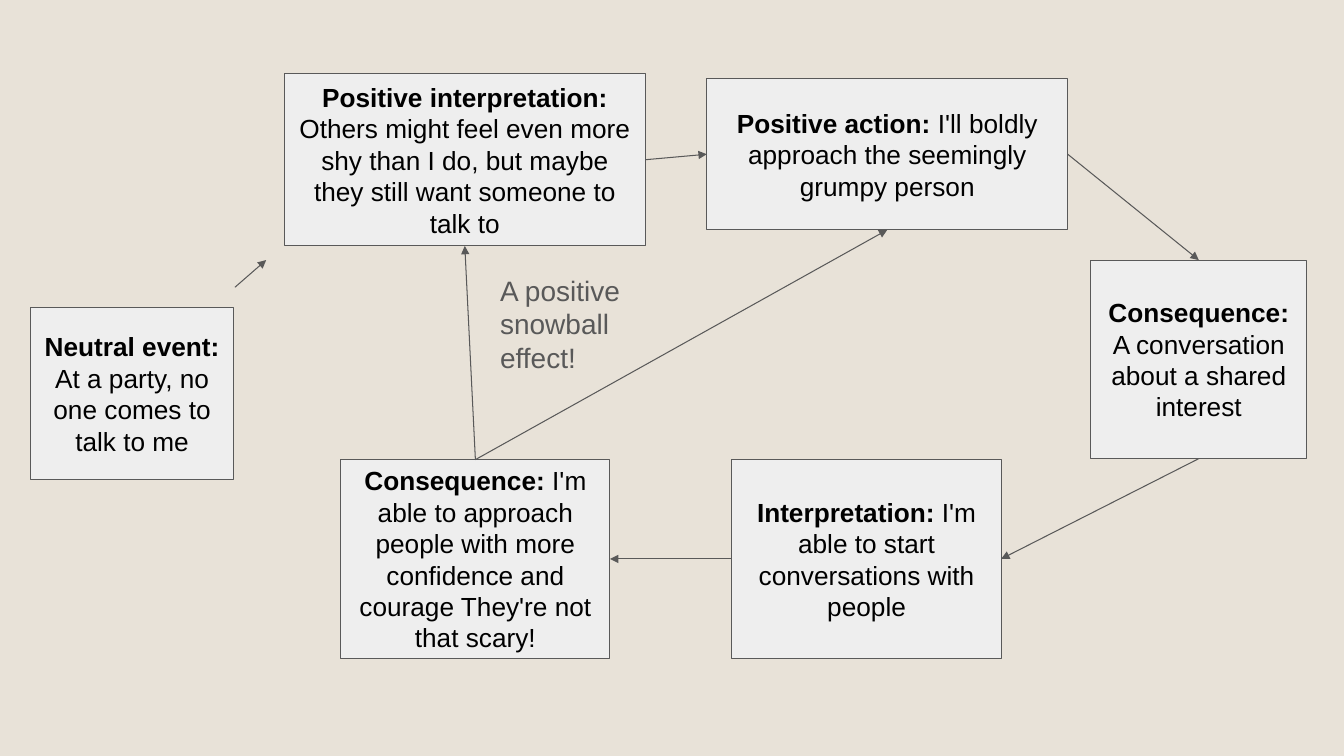
"""Build a slide showing a positive snowball effect as a cycle of linked boxes."""
from lxml import etree
from pptx import Presentation
from pptx.dml.color import RGBColor
from pptx.enum.shapes import MSO_CONNECTOR, MSO_SHAPE
from pptx.enum.text import MSO_ANCHOR, MSO_AUTO_SIZE, PP_ALIGN
from pptx.oxml.ns import qn
from pptx.util import Inches, Pt

RECTANGLE = MSO_SHAPE.RECTANGLE
STRAIGHT = MSO_CONNECTOR.STRAIGHT
MIDDLE, TOP_ANCHOR = MSO_ANCHOR.MIDDLE, MSO_ANCHOR.TOP
CENTER, LEFT_ALIGN = PP_ALIGN.CENTER, PP_ALIGN.LEFT
GROW = MSO_AUTO_SIZE.SHAPE_TO_FIT_TEXT
TOP, LEFT, BOTTOM, RIGHT = range(4)

THEME = {
    "background": RGBColor.from_string("E8E2D8"),
    "box": RGBColor.from_string("EEEEEE"),
    "line": RGBColor.from_string("595959"),
    "text": RGBColor.from_string("000000"),
    "font": "Arial",
    "box_size": Pt(18.7),
    "caption_size": Pt(20),
    "line_width": Pt(0.75),
    "inset": Inches(0.13),
}

WIDE, LOWER_WIDTH = 3.58, 2.67
TALL, LOWER_HEIGHT = 1.71, 1.97
LOWER_TOP = 4.56

BOXES = {
    "event": (0.3, 3.05, 2.02, TALL, "Neutral event:", " At a party, no one comes to talk to me"),
    "positive": (2.82, 0.73, WIDE, TALL, "Positive interpretation:",
                 " Others might feel even more shy than I do, but maybe they still want someone to talk to"),
    "action": (7.01, 0.78, WIDE, 1.5, "Positive action:",
               " I'll boldly approach the seemingly grumpy person"),
    "conversation": (10.82, 2.58, 2.14, LOWER_HEIGHT, "Consequence: ",
                     "A conversation about a shared interest"),
    "interpretation": (7.26, LOWER_TOP, LOWER_WIDTH, LOWER_HEIGHT, "Interpretation:",
                       " I'm able to start conversations with people"),
    "confidence": (3.38, LOWER_TOP, LOWER_WIDTH, LOWER_HEIGHT, "Consequence:",
                   " I'm able to approach people with more confidence and courage They're not that scary!"),
}

LINKS = [
    ("positive", RIGHT, "action", LEFT),
    ("action", RIGHT, "conversation", TOP),
    ("conversation", BOTTOM, "interpretation", RIGHT),
    ("interpretation", LEFT, "confidence", RIGHT),
    ("confidence", TOP, "positive", BOTTOM),
    ("confidence", TOP, "action", BOTTOM),
]


def write_text(shape, spans, size, color, align, anchor):
    """Fill a shape with one paragraph of (text, bold) spans."""
    frame = shape.text_frame
    frame.word_wrap = True
    frame.vertical_anchor = anchor
    frame.margin_left = frame.margin_right = THEME["inset"]
    frame.margin_top = frame.margin_bottom = THEME["inset"]
    para = frame.paragraphs[0]
    para.alignment = align
    for text, bold in spans:
        span = para.add_run()
        span.text = text
        span.font.name = THEME["font"]
        span.font.size = size
        span.font.bold = bold
        span.font.color.rgb = color


def add_arrow(page, start, end):
    """Draw a thin straight arrow between two points in inches."""
    arrow = page.shapes.add_connector(STRAIGHT, *map(Inches, start + end))
    arrow.line.color.rgb = THEME["line"]
    arrow.line.width = THEME["line_width"]
    head = etree.SubElement(arrow.line._get_or_add_ln(), qn("a:tailEnd"))
    head.set("type", "triangle")
    etree.SubElement(arrow._element.spPr, qn("a:effectLst"))
    return arrow


deck = Presentation()
deck.slide_width, deck.slide_height = Inches(13.33), Inches(7.5)
page = deck.slides.add_slide(deck.slide_layouts[6])
page.background.fill.solid()
page.background.fill.fore_color.rgb = THEME["background"]

boxes = {}
for name, (left, top, width, height, label, detail) in BOXES.items():
    box = page.shapes.add_shape(RECTANGLE, *map(Inches, (left, top, width, height)))
    box.shadow.inherit = False
    box.fill.solid()
    box.fill.fore_color.rgb = THEME["box"]
    box.line.color.rgb = THEME["line"]
    box.line.width = THEME["line_width"]
    write_text(box, [(label, True), (detail, False)], THEME["box_size"], THEME["text"], CENTER, MIDDLE)
    boxes[name] = box

add_arrow(page, (2.33, 2.85), (2.64, 2.58))
for source, source_side, target, target_side in LINKS:
    arrow = add_arrow(page, (0, 0), (0, 0))
    arrow.begin_connect(boxes[source], source_side)
    arrow.end_connect(boxes[target], target_side)

caption = page.shapes.add_textbox(*map(Inches, (4.83, 2.58, 2.17, 0.94)))
write_text(caption, [("A positive snowball effect!", False)], THEME["caption_size"], THEME["line"],
           LEFT_ALIGN, TOP_ANCHOR)
caption.text_frame.auto_size = GROW

deck.save("out.pptx")
